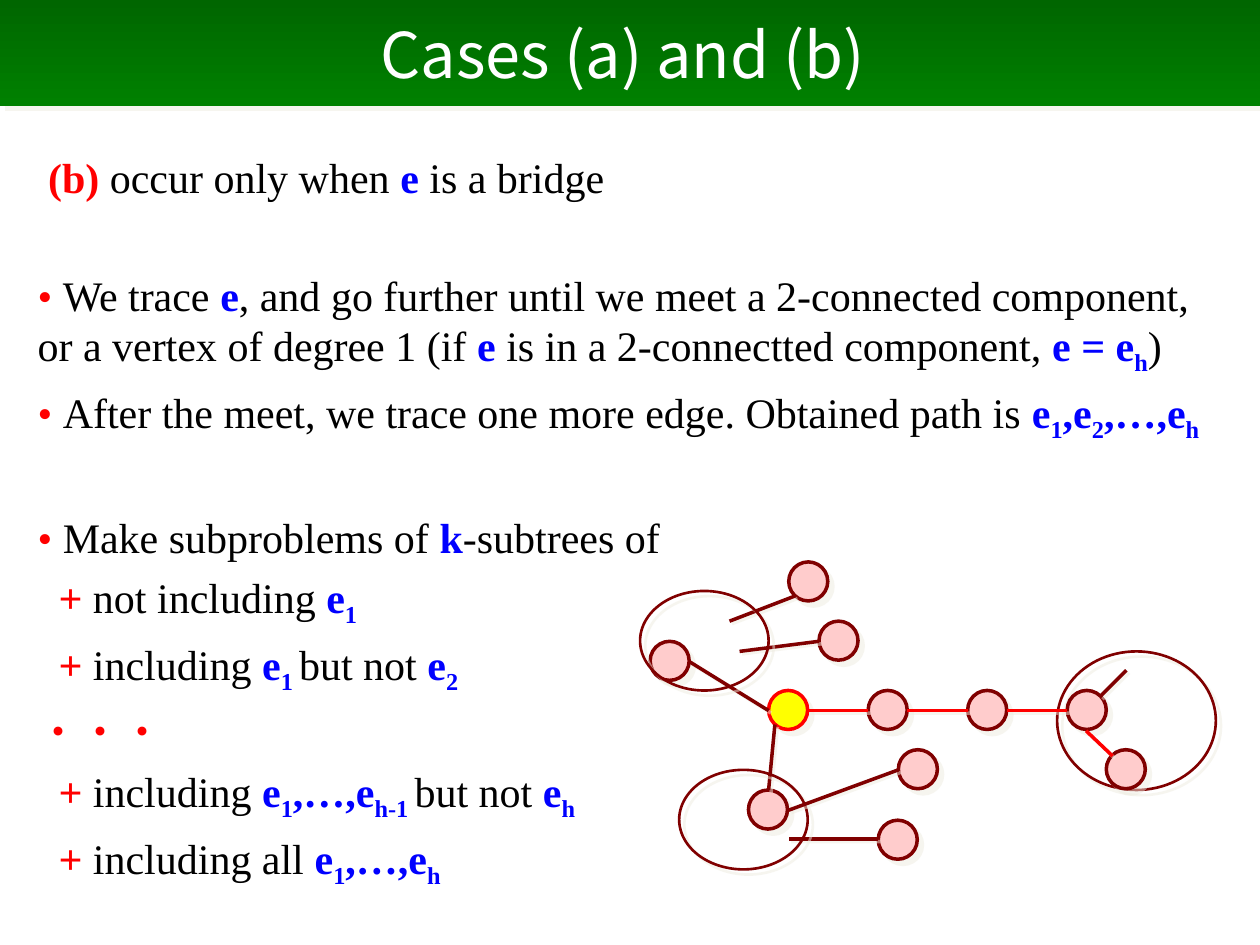
from lxml import etree
from pptx import Presentation
from pptx import util as u
from pptx.dml.color import RGBColor
from pptx.enum import shapes, text
from pptx.oxml.ns import qn

RED, BLUE, BLACK, WHITE = "FF0000", "0000FF", "000000", "FFFFFF"
MAROON, PINK, YELLOW, SHADOW = "800000", "FFCCCC", "FFFF00", "EEECE1"
NODE = 0.31

# Run styles: colour, bold, subscript
MARK, STRONG = (RED, False, False), (RED, True, False)
PLAIN, VAR, SUB = (BLACK, False, False), (BLUE, True, False), (BLUE, True, True)

BULLET, PLUS = ("• ", MARK), ("+ ", STRONG)
E, E1 = ("e", VAR), [("e", VAR), ("1", SUB)]
E1_TO = E1 + [(",…,e", VAR)]
H = ("h", SUB)

# Paragraphs: left indent in points, whether a gap comes before, runs
BODY = [
    (6, False, [("(b) ", STRONG), ("occur only when ", PLAIN), ("e ", VAR),
                ("is a bridge", PLAIN)]),
    (0, True, [BULLET, ("We trace ", PLAIN), E,
               (", and go further until we meet a 2-connected component, "
                "or a vertex of degree 1 (if ", PLAIN), E,
               (" is in a 2-connectted component, ", PLAIN),
               ("e = e", VAR), H, (")", PLAIN)]),
    (0, False, [BULLET, ("After the meet, we trace one more edge. "
                         "Obtained path is ", PLAIN),
                *E1, (",e", VAR), ("2", SUB), (",…,e", VAR), H]),
    (0, True, [BULLET, ("Make subproblems of ", PLAIN), ("k", VAR),
               ("-subtrees of", PLAIN)]),
    (12, False, [PLUS, ("not including ", PLAIN), *E1]),
    (12, False, [PLUS, ("including ", PLAIN), E, ("1 ", SUB),
                 ("but not ", PLAIN), E, ("2", SUB)]),
    (0, False, [("・・・", MARK)]),
    (12, False, [PLUS, ("including ", PLAIN), *E1_TO, ("h-1 ", SUB),
                 ("but not ", PLAIN), E, H]),
    (12, False, [PLUS, ("including all ", PLAIN), *E1_TO, H]),
]


def rgb(value):
    return RGBColor.from_string(value)


def add_shadow(sp, distance):
    """Faint hard shadow, down and to the right; distance in points."""
    props = sp._element.spPr
    effects = etree.SubElement(props, qn("a:effectLst"))
    outer = etree.SubElement(effects, qn("a:outerShdw"), blurRad="0",
                             dist=str(u.Pt(distance)), dir="2700000",
                             algn="ctr", rotWithShape="0")
    color = etree.SubElement(outer, qn("a:srgbClr"), val=SHADOW)
    etree.SubElement(color, qn("a:alpha"), val="50000")


def add_run(p, words, font, size, color, bold=False, sub=False):
    r = p.add_run()
    r.text = words
    r.font.name, r.font.size, r.font.bold = font, u.Pt(size), bold
    r.font.color.rgb = rgb(color)
    if sub:
        r._r.get_or_add_rPr().set("baseline", "-25000")


def add_title(s, x, y, w, h):
    sp = s.shapes.add_shape(shapes.MSO_SHAPE.RECTANGLE, u.Inches(x),
                            u.Inches(y), u.Inches(w), u.Inches(h))
    sp.fill.gradient()
    sp.fill.gradient_angle = 270
    for stop, color, position in zip(sp.fill.gradient_stops,
                                     ("006600", "008000"), (0, 1)):
        stop.color.rgb = rgb(color)
        stop.position = position
    sp.line.fill.background()
    add_shadow(sp, 4.2)
    tf = sp.text_frame
    tf.vertical_anchor = text.MSO_ANCHOR.MIDDLE
    p = tf.paragraphs[0]
    p.alignment = text.PP_ALIGN.CENTER
    add_run(p, "Cases (a) and (b) ", "Noto Sans CJK JP", 36, WHITE)


def add_body(s, x, y, w, h):
    sp = s.shapes.add_textbox(u.Inches(x), u.Inches(y), u.Inches(w), u.Inches(h))
    tf = sp.text_frame
    tf.word_wrap = True
    for i, (indent, gap, runs) in enumerate(BODY):
        p = tf.add_paragraph() if i else tf.paragraphs[0]
        p.space_before = u.Pt(38.6 if gap else 5.5)
        if indent:
            p._p.get_or_add_pPr().set("marL", str(u.Pt(indent)))
        for words, (color, bold, sub) in runs:
            add_run(p, words, "Times New Roman", 24, color, bold, sub)


def add_graph(s, x, y):
    """Vertices, edges and components, placed from the corner (x, y)."""
    def oval(left, top, w, h, fill, line, width):
        sp = s.shapes.add_shape(shapes.MSO_SHAPE.OVAL, u.Inches(x + left),
                                u.Inches(y + top), u.Inches(w), u.Inches(h))
        if fill:
            sp.fill.solid()
            sp.fill.fore_color.rgb = rgb(fill)
        else:
            sp.fill.background()
        sp.line.color.rgb, sp.line.width = rgb(line), u.Pt(width)
        add_shadow(sp, 4.2)

    def vertices(places, fill=PINK, line=MAROON):
        for left, top in places:
            oval(left, top, NODE, NODE, fill, line, 2)

    def edges(ends, color=MAROON):
        for x1, y1, x2, y2 in ends:
            cxn = s.shapes.add_connector(
                shapes.MSO_CONNECTOR.STRAIGHT, u.Inches(x + x1),
                u.Inches(y + y1), u.Inches(x + x2), u.Inches(y + y2))
            cxn.line.color.rgb, cxn.line.width = rgb(color), u.Pt(2)
            add_shadow(cxn, 2)

    path_x = [1.02 + 0.79 * i for i in range(4)]
    path_y = 1.02

    # Left half: start vertex, its neighbours and their edges
    vertices([(0.08, 0.63), (1.89, 2.05), (2.05, 1.49), (0.86, 1.81),
              (1.18, 0), (1.42, 0.47), (path_x[1], path_y)])
    vertices([(path_x[0], path_y)], YELLOW, RED)
    edges([(1.89, 2.2, 1.18, 2.2), (1.42, 0.63, 0.79, 0.71),
           (1.07, 1.29, 1.02, 1.81), (1.23, 0.27, 0.71, 0.47),
           (0.39, 0.79, 1.02, 1.18)])

    # Components
    for left, top, w, h in [(0, 0.23, 1.02, 0.79), (3.31, 0.71, 1.26, 1.1),
                            (0.31, 1.65, 1.02, 0.79)]:
        oval(left, top, w, h, None, MAROON, 1.5)

    # Traced path and the right component
    vertices([(path_x[2], path_y), (path_x[3], path_y), (3.7, 1.49)])
    edges([(a + NODE, 1.18, b, 1.18) for a, b in zip(path_x, path_x[1:])]
          + [(3.54, 1.34, 3.75, 1.54)], RED)
    edges([(2.05, 1.65, 1.18, 1.97), (3.65, 1.07, 3.86, 0.86)])


def main():
    prs = Presentation()
    prs.slide_width, prs.slide_height = u.Inches(10), u.Inches(7.5)
    s = prs.slides.add_slide(prs.slide_layouts[6])
    add_title(s, 0, 0, 10, 0.84)
    add_body(s, 0.2, 1.15, 9.53, 6)
    add_graph(s, 5.08, 4.46)
    prs.save("out.pptx")


if __name__ == "__main__":
    main()
